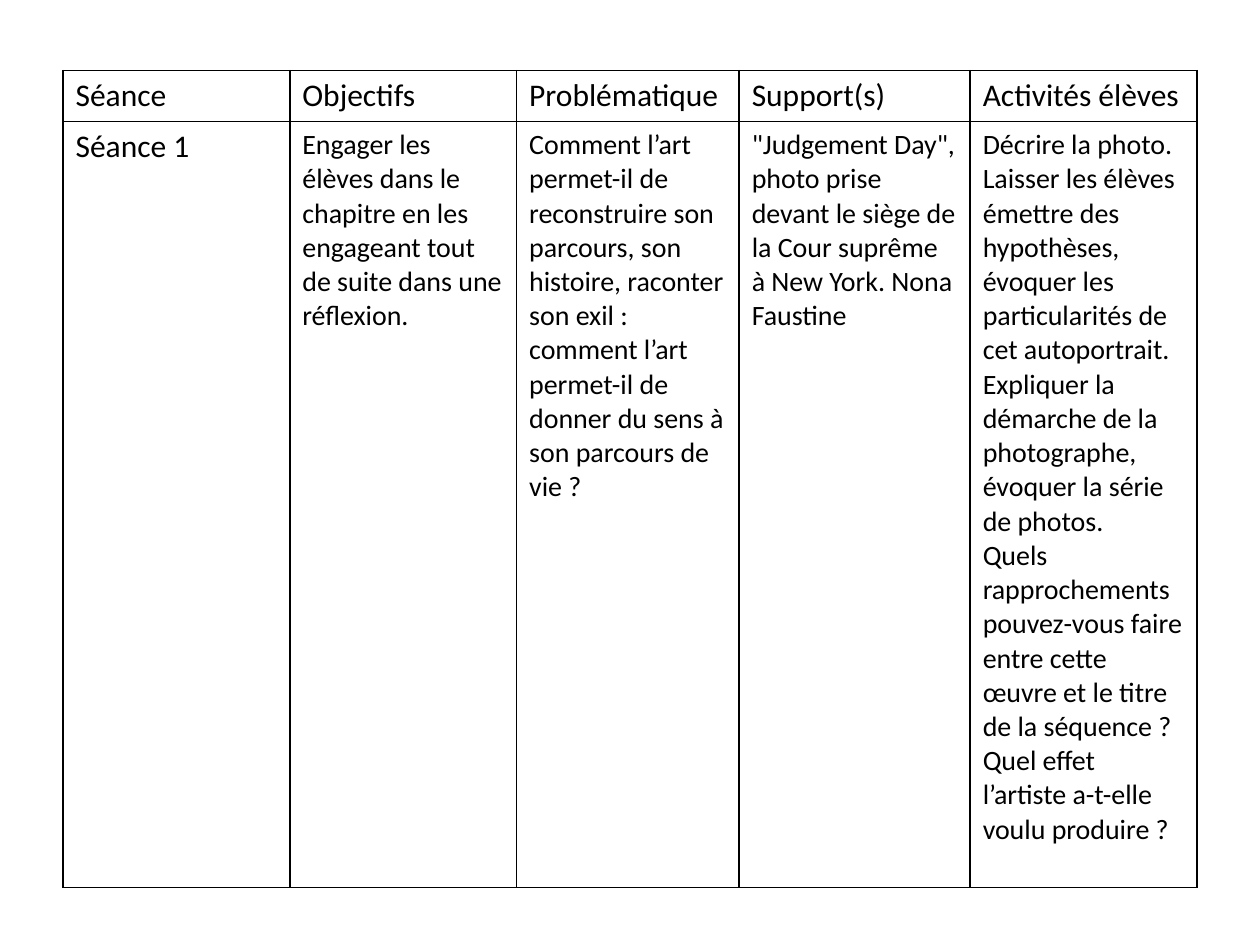
"""Build a slide with the plan of a teaching session in a bordered table."""
from dataclasses import dataclass

from lxml import etree
from pptx import Presentation
from pptx.dml.color import RGBColor
from pptx.oxml.ns import qn
from pptx.table import _Cell
from pptx.util import Pt

FONT = "Calibri"
BLACK = "000000"
BLANK_LAYOUT = 6
BORDER_WIDTH = Pt(1)
BORDER_TAGS = ("a:lnL", "a:lnR", "a:lnT", "a:lnB")
TABLE_LEFT, TABLE_TOP = 36, 40.3
ROW_HEIGHTS = (29.2, 437.8)
HEADING_SIZE, BODY_SIZE = 18, 16


@dataclass(frozen=True)
class Column:
    heading: str
    width: float
    paragraphs: tuple[str, ...]
    body_size: int = BODY_SIZE


COLUMNS = (
    Column("Séance", 129.6, ("Séance 1",), HEADING_SIZE),
    Column("Objectifs", 129.6, (
        "Engager les élèves dans le chapitre en les engageant tout de suite "
        "dans une réflexion.",
    )),
    Column("Problématique", 127.2, (
        "Comment l’art permet-il de reconstruire son parcours, son histoire, "
        "raconter son exil : comment l’art permet-il de donner du sens à son "
        "parcours de vie ?",
    )),
    Column("Support(s)", 132, (
        '"Judgement Day", photo prise devant le siège de la Cour suprême '
        "à New York. Nona Faustine",
    )),
    Column("Activités élèves", 129.6, (
        "Décrire la photo.",
        "Laisser les élèves émettre des hypothèses, évoquer les particularités "
        "de cet autoportrait.",
        "Expliquer la démarche de la photographe, évoquer la série de photos.",
        "Quels rapprochements pouvez-vous faire entre cette œuvre et le titre "
        "de la séquence ? Quel effet l’artiste a-t-elle voulu produire ?",
    )),
)


def color(value: str) -> RGBColor:
    return RGBColor.from_string(value)


def add_borders(cell: _Cell) -> None:
    properties = cell._tc.get_or_add_tcPr()
    for position, tag in enumerate(BORDER_TAGS):
        line = etree.Element(qn(tag), w=str(BORDER_WIDTH))
        fill = etree.SubElement(line, qn("a:solidFill"))
        etree.SubElement(fill, qn("a:srgbClr"), val=BLACK)
        properties.insert(position, line)


def fill_cell(cell: _Cell, paragraphs: tuple[str, ...], size: int) -> None:
    cell.fill.background()
    add_borders(cell)
    frame = cell.text_frame
    for index, text in enumerate(paragraphs):
        paragraph = frame.add_paragraph() if index else frame.paragraphs[0]
        run = paragraph.add_run()
        run.text = text
        run.font.name = FONT
        run.font.size = Pt(size)
        run.font.bold = False
        run.font.color.rgb = color(BLACK)


def main() -> None:
    presentation = Presentation()
    presentation.slide_width, presentation.slide_height = Pt(720), Pt(540)
    slide = presentation.slides.add_slide(presentation.slide_layouts[BLANK_LAYOUT])
    table = slide.shapes.add_table(
        len(ROW_HEIGHTS), len(COLUMNS), Pt(TABLE_LEFT), Pt(TABLE_TOP),
        Pt(sum(column.width for column in COLUMNS)), Pt(sum(ROW_HEIGHTS)),
    ).table
    table.first_row = table.horz_banding = False
    for row, height in zip(table.rows, ROW_HEIGHTS):
        row.height = Pt(height)
    for index, column in enumerate(COLUMNS):
        table.columns[index].width = Pt(column.width)
        fill_cell(table.cell(0, index), (column.heading,), HEADING_SIZE)
        fill_cell(table.cell(1, index), column.paragraphs, column.body_size)
    presentation.save("out.pptx")


if __name__ == "__main__":
    main()
